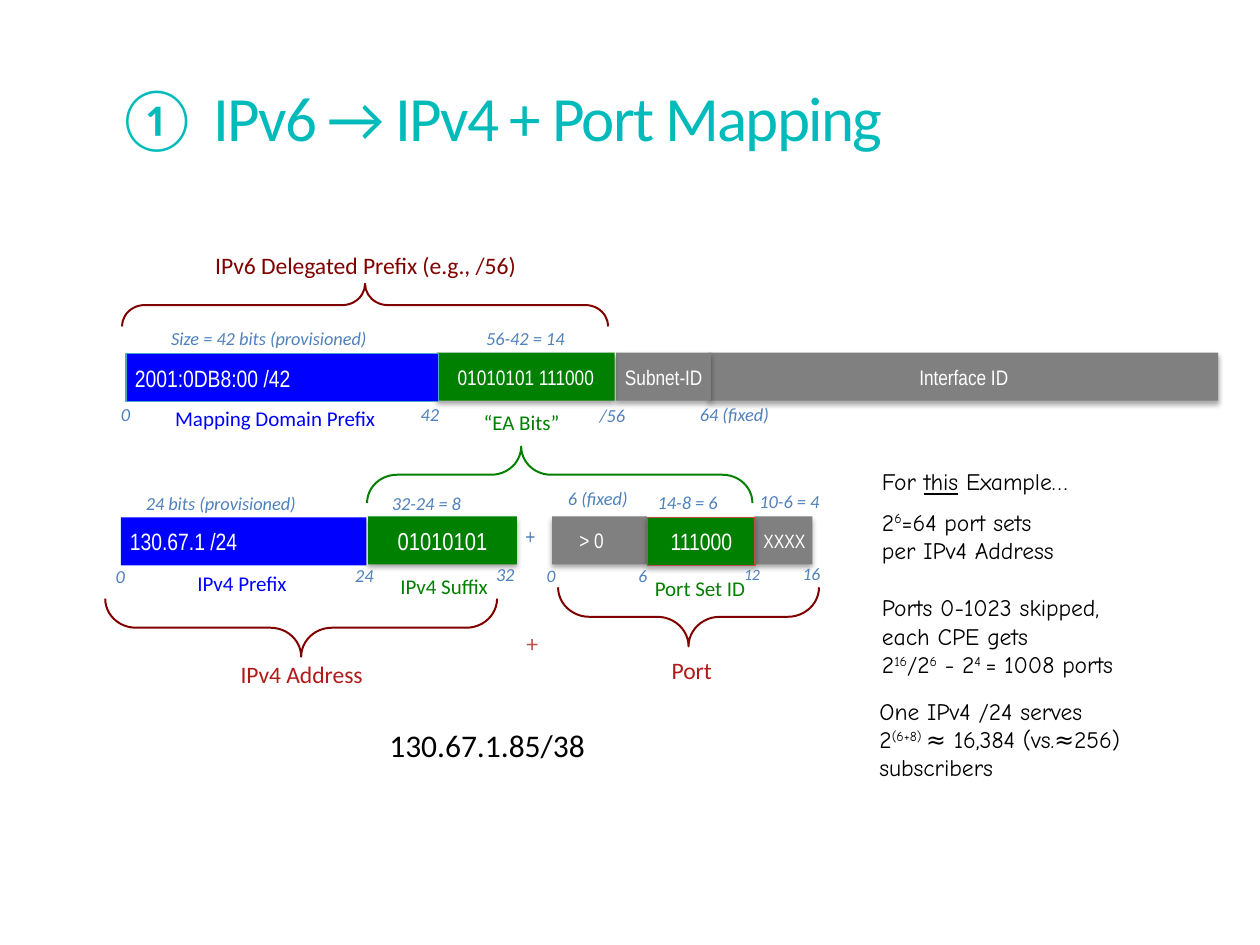
from dataclasses import dataclass

from lxml import etree
from pptx import Presentation
from pptx import util as u
from pptx.dml.color import RGBColor
from pptx.enum import shapes, text
from pptx.oxml import ns

COLORS = {
    "teal": "01BBBB", "maroon": "800000", "red": "B21A1A", "rose": "C0504D",
    "steel": "4F81BD", "blue": "0000FF", "green": "008000", "gray": "808080",
    "aqua": "46AAC5", "brick": "BF4C48", "white": "FFFFFF", "ink": "000102",
    "black": "000000",
}
ALIGN = {"l": text.PP_ALIGN.LEFT, "c": text.PP_ALIGN.CENTER}


@dataclass
class Label:
    x: float
    y: float
    w: float
    text: str
    size: float = 10.5
    color: str = "steel"
    font: str = "Calibri"
    italic: bool = False
    wrap: bool = False


@dataclass
class Bar:
    x: float
    y: float
    w: float
    text: str
    fill: str
    size: float = 12
    align: str = "c"
    line: str = ""
    shadow: bool = True
    inset: float = 0.18


@dataclass
class Brace:
    x: float
    y: float
    w: float
    h: float
    color: str = "maroon"
    down: bool = False
    tip: float = 0.5


def bit(x: float, y: float, w: float, s: str, size: float = 10.5) -> Label:
    """Return an italic bit count or bit position."""
    return Label(x, y, w, s, size, italic=True)


def note(x: float, y: float, w: float, s: str) -> Label:
    """Return a wrapped remark for the example column."""
    return Label(x, y, w, s, 13.5, "ink", "Comic Neue", wrap=True)


def rgb(name: str) -> RGBColor:
    """Look up a named colour."""
    return RGBColor.from_string(COLORS[name])


def put(obj, values: dict) -> None:
    """Set each attribute in values on obj."""
    for key, value in values.items():
        setattr(obj, key, value)


def frame(sp, inset: float, top: float, anchor, wrap: bool = False):
    """Prepare and return the text frame of a shape."""
    tf = sp.text_frame
    put(tf, {"margin_left": u.Cm(inset), "margin_right": u.Cm(inset),
             "margin_top": u.Cm(top), "margin_bottom": u.Cm(top),
             "vertical_anchor": anchor, "word_wrap": wrap})
    return tf


def add_run(p, s: str, size: float, font: str, color: str, **extra):
    """Append a formatted run to a paragraph."""
    r = p.add_run()
    r.text = s
    put(r.font, {"size": u.Pt(size), "name": font, **extra})
    r.font.color.rgb = rgb(color)
    return r


def draw_label(slide, d: Label) -> None:
    """Draw text, raising parts between ^ and underlining parts between _."""
    lines = d.text.split("\n")
    height = len(lines) * d.size * 0.0423 + 0.2
    sp = slide.shapes.add_textbox(u.Cm(d.x), u.Cm(d.y), u.Cm(d.w), u.Cm(height))
    tf = frame(sp, 0.2, 0.1, text.MSO_ANCHOR.TOP, d.wrap)
    for n, line in enumerate(lines):
        p = tf.add_paragraph() if n else tf.paragraphs[0]
        for i, part in enumerate(line.split("^")):
            for j, piece in enumerate(part.split("_")):
                if piece:
                    r = add_run(p, piece, d.size, d.font, d.color,
                                italic=d.italic, underline=j % 2 == 1)
                    if i % 2:
                        r.font._element.set("baseline", "30000")


def add_shadow(sp) -> None:
    """Give a shape a soft shadow straight below it."""
    effects = sp._element.spPr.find(ns.qn("a:effectLst"))
    shadow = etree.SubElement(effects, ns.qn("a:outerShdw"), blurRad="39370",
                              dist="22860", dir="5400000", rotWithShape="0")
    color = etree.SubElement(shadow, ns.qn("a:srgbClr"), val=COLORS["black"])
    etree.SubElement(color, ns.qn("a:alpha"), val="35000")


def draw_bar(slide, d: Bar) -> None:
    """Draw one address field."""
    sp = slide.shapes.add_shape(shapes.MSO_SHAPE.RECTANGLE, u.Cm(d.x), u.Cm(d.y),
                                u.Cm(d.w), u.Cm(0.97))
    sp.shadow.inherit = False
    sp.fill.solid()
    sp.fill.fore_color.rgb = rgb(d.fill)
    if d.line:
        sp.line.color.rgb = rgb(d.line)
        sp.line.width = u.Pt(0.75)
    else:
        sp.line.fill.background()
    if d.shadow:
        add_shadow(sp)
    p = frame(sp, d.inset, 0.08, text.MSO_ANCHOR.MIDDLE).paragraphs[0]
    p.alignment = ALIGN[d.align]
    add_run(p, d.text, d.size, "Arial Narrow", "white")


def draw_brace(slide, d: Brace) -> None:
    """Draw a horizontal brace that fills the given area."""
    shift = (d.w - d.h) / 2
    sp = slide.shapes.add_shape(shapes.MSO_SHAPE.RIGHT_BRACE, u.Cm(d.x + shift),
                                u.Cm(d.y - shift), u.Cm(d.h), u.Cm(d.w))
    sp.shadow.inherit = False
    sp.rotation = 90 if d.down else 270
    sp.adjustments[0], sp.adjustments[1] = 0.53, d.tip
    sp.fill.background()
    sp.line.color.rgb = rgb(d.color)
    sp.line.width = u.Pt(1.13)


def draw_title(slide, s: str) -> None:
    """Draw the heading with its circled number."""
    sp = slide.shapes.add_textbox(u.Cm(-5.35), u.Cm(1.7), u.Cm(30.81), u.Cm(1.52))
    p = frame(sp, 0.23, 0.13, text.MSO_ANCHOR.BOTTOM, True).paragraphs[0]
    put(p, {"alignment": ALIGN["c"], "line_spacing": 0.8})
    indent = u.Cm(1.98)
    pPr = p._p.get_or_add_pPr()
    pPr.set("marL", str(indent))
    pPr.set("indent", str(-indent))
    etree.SubElement(pPr, ns.qn("a:buFont"), typeface="+mj-lt")
    etree.SubElement(pPr, ns.qn("a:buAutoNum"), type="circleNumDbPlain")
    r = add_run(p, s, 36, "Calibri", "teal")
    r.font._element.set("spc", "-100")


BRACES = [
    Brace(2.46, 5.72, 9.8, 0.86),
    Brace(2.12, 12.07, 7.9, 1.17, down=True),
    Brace(11.25, 11.84, 5.26, 1.19, down=True),
    Brace(7.4, 9.0, 7.77, 1.14, "green", tip=0.4),
]
BARS = [
    Bar(14.3, 7.11, 10.26, "Interface ID", "gray"),
    Bar(12.42, 7.11, 1.91, "Subnet-ID", "gray", align="l"),
    Bar(8.81, 7.11, 3.58, "01010101 111000", "green"),
    Bar(2.54, 7.13, 6.3, "2001:0DB8:00 /42", "blue", 13.5, "l", "aqua", False),
    Bar(11.13, 10.41, 1.91, "> 0", "gray", align="l", inset=0.55),
    Bar(15.21, 10.41, 1.17, "XXXX", "gray", 11, "l"),
    Bar(2.44, 10.43, 4.95, "130.67.1 /24", "blue", 13.5, "l", shadow=False),
    Bar(7.42, 10.41, 3, "01010101", "green", 14),
    Bar(13.06, 10.43, 2.16, "111000", "green", 13.5, line="brick"),
]
LABELS = [
    Label(4.14, 4.95, 6.65, "IPv6 Delegated Prefix (e.g., /56)", 13.5, "maroon"),
    Label(4.65, 13.21, 2.9, "IPv4 Address", 13.5, "red"),
    Label(13.34, 13.13, 1.22, "Port", 13.5, "red"),
    Label(10.41, 12.57, 0.66, "+", 13.5, "rose"),
    Label(10.39, 10.46, 0.58, "+", 12, "steel", "Arial Narrow"),
    Label(9.55, 8.15, 2, "“EA Bits”", 12, "green"),
    Label(3.33, 8.08, 4.47, "Mapping Domain Prefix", 12, "blue"),
    Label(3.78, 11.4, 3.28, "IPv4 Prefix", 12, "blue", wrap=True),
    Label(7.87, 11.46, 2.18, "IPv4 Suffix", 12, "green"),
    Label(13, 11.51, 2.31, "Port Set ID", 12, "green"),
    bit(3.25, 6.5, 5, "Size = 42 bits (provisioned)"),
    bit(9.6, 6.5, 2.29, "56-42 = 14"),
    bit(2.24, 8.02, 0.69, "0"),
    bit(8.28, 8.02, 0.89, "42"),
    bit(11.89, 8.05, 1.02, "/56"),
    bit(13.91, 8.02, 2.06, "64 (fixed)"),
    bit(2.74, 9.83, 3.86, "24 bits (provisioned)"),
    bit(7.7, 9.83, 2.08, "32-24 = 8"),
    bit(11.25, 9.73, 1.83, "6 (fixed)"),
    bit(13.06, 9.8, 1.85, "14-8 = 6"),
    bit(15.11, 9.78, 1.85, "10-6 = 4"),
    bit(2.13, 11.3, 0.69, "0"),
    bit(6.96, 11.28, 0.89, "24"),
    bit(9.8, 11.25, 0.89, "32"),
    bit(10.82, 11.28, 0.66, "0", 10),
    bit(12.67, 11.28, 0.66, "6", 10),
    bit(14.8, 11.29, 1.3, "12", 9),
    bit(15.98, 11.25, 0.86, "16", 10),
    note(17.58, 9.32, 4.72, "For _this_ Example…"),
    note(17.58, 10.13, 5.18, "2^6^=64 port sets\nper IPv4 Address"),
    note(17.58, 11.86, 6.5, "Ports 0-1023 skipped,\neach CPE gets\n"
         "2^16^/2^6^ - 2^4 ^= 1008 ports"),
    note(17.53, 13.94, 7.04, "One IPv4 /24 serves\n"
         "2^(6+8) ^≈ 16,384 (vs.≈256)\nsubscribers"),
    Label(7.65, 14.53, 4.7, "130.67.1.85/38", 18, "black"),
]


def main() -> None:
    """Build the address mapping slide."""
    prs = Presentation()
    put(prs, {"slide_width": u.Cm(25.4), "slide_height": u.Cm(19.05)})
    slide = prs.slides.add_slide(prs.slide_layouts[6])
    draw_title(slide, "IPv6 → IPv4 + Port Mapping")
    for draw, items in ((draw_brace, BRACES), (draw_bar, BARS), (draw_label, LABELS)):
        for item in items:
            draw(slide, item)
    prs.save("out.pptx")


if __name__ == "__main__":
    main()
